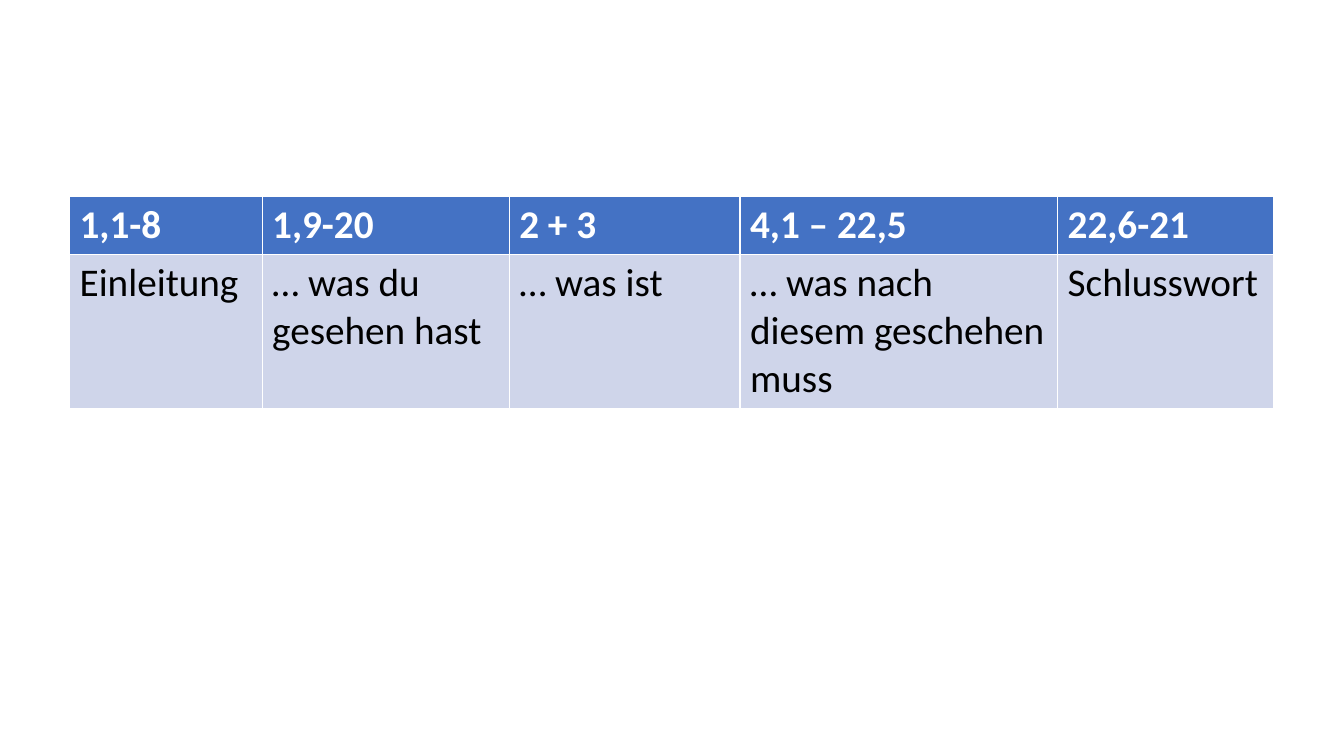
from pptx import Presentation
from pptx.dml.color import RGBColor
from pptx.util import Inches, Pt

COLUMNS = [
    ("1,1-8", "Einleitung", 1.91),
    ("1,9-20", "… was du gesehen hast", 2.45),
    ("2 + 3", "… was ist", 2.29),
    ("4,1 – 22,5", "… was nach diesem geschehen muss", 3.15),
    ("22,6-21", "Schlusswort", 2.14),
]
ROW_HEIGHTS = (0.57, 1.5)


def color(value):
    return RGBColor.from_string(value)


def fill_cell(cell, text, fill, font_color, bold):
    cell.fill.solid()
    cell.fill.fore_color.rgb = color(fill)
    cell.text = text
    font = cell.text_frame.paragraphs[0].font
    font.name = "Calibri"
    font.size = Pt(28)
    font.bold = bold
    font.color.rgb = color(font_color)


def add_outline_table(slide, left, top, width, height):
    frame = slide.shapes.add_table(
        len(ROW_HEIGHTS), len(COLUMNS),
        Inches(left), Inches(top), Inches(width), Inches(height))
    table = frame.table
    for row, row_height in zip(table.rows, ROW_HEIGHTS):
        row.height = Inches(row_height)
    for index, (verses, section, column_width) in enumerate(COLUMNS):
        table.columns[index].width = Inches(column_width)
        fill_cell(table.cell(0, index), verses, "4472C4", "FFFFFF", True)
        fill_cell(table.cell(1, index), section, "CFD5EA", "000000", False)


def main():
    presentation = Presentation()
    presentation.slide_width = Inches(13.33)
    presentation.slide_height = Inches(7.5)
    slide = presentation.slides.add_slide(presentation.slide_layouts[6])
    add_outline_table(slide, 0.69, 1.95, 11.95, sum(ROW_HEIGHTS))
    presentation.save("out.pptx")


if __name__ == "__main__":
    main()
